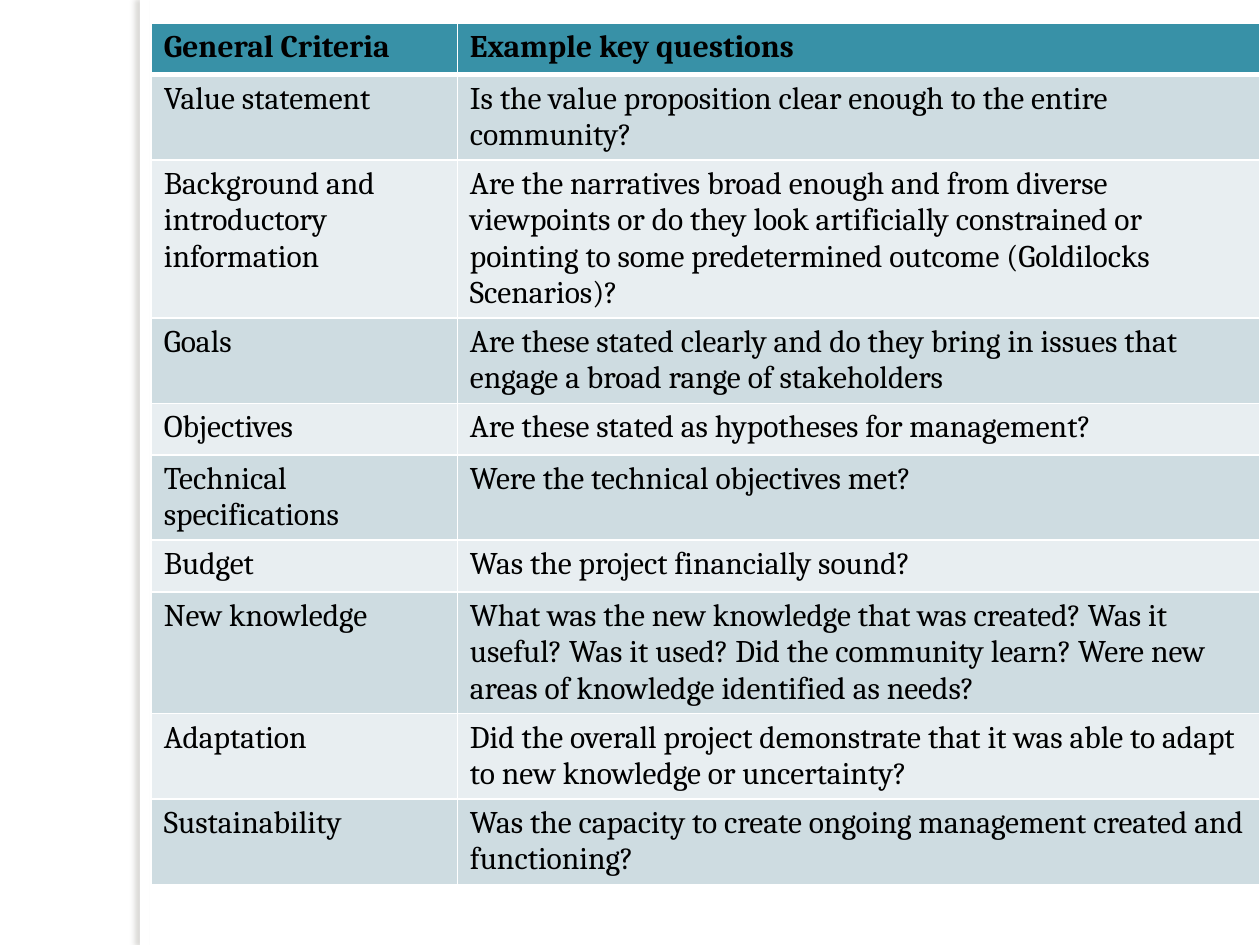
from lxml import etree
from pptx import Presentation
from pptx.dml.color import RGBColor
from pptx.enum.shapes import MSO_SHAPE
from pptx.oxml.ns import qn
from pptx.util import Cm, Pt

RECT = MSO_SHAPE.RECTANGLE
WHITE = RGBColor(0xFF, 0xFF, 0xFF)
BLACK = RGBColor(0x00, 0x00, 0x00)
TEAL = RGBColor(0x38, 0x91, 0xA7)
MIST = RGBColor(0xCE, 0xDC, 0xE1)
PALE = RGBColor(0xE8, 0xEE, 0xF1)
SHADE = RGBColor(0x73, 0x6F, 0x63)

ROWS = [
    ("General Criteria", "Example key questions"),
    ("Value statement",
     "Is the value proposition clear enough to the entire community?"),
    ("Background and introductory information",
     "Are the narratives broad enough and from diverse viewpoints or do they "
     "look artificially constrained or pointing to some predetermined outcome "
     "(Goldilocks Scenarios)?"),
    ("Goals",
     "Are these stated clearly and do they bring in issues that engage a "
     "broad range of stakeholders"),
    ("Objectives", "Are these stated as hypotheses for management?"),
    ("Technical specifications", "Were the technical objectives met?"),
    ("Budget", "Was the project financially sound?"),
    ("New knowledge",
     "What was the new knowledge that was created? Was it useful? Was it "
     "used? Did the community learn? Were new areas of knowledge identified "
     "as needs?"),
    ("Adaptation",
     "Did the overall project demonstrate that it was able to adapt to new "
     "knowledge or uncertainty?"),
    ("Sustainability",
     "Was the capacity to create ongoing management created and functioning?"),
]


class Deck:
    """Holds the text style and the current slide."""

    def __init__(self):
        self.prs = Presentation()
        self.prs.slide_width, self.prs.slide_height = Cm(25.4), Cm(19.05)
        self.slide = self.prs.slides.add_slide(self.prs.slide_layouts[6])
        self.style = {"name": "Cambria", "size": Pt(18)}

    def color(self, parent, rgb):
        return etree.SubElement(parent, qn("a:srgbClr"), val=str(rgb))

    def strip(self, left, top, width, height):
        shape = self.slide.shapes.add_shape(
            RECT, Cm(left), Cm(top), Cm(width), Cm(height))
        shape.fill.solid()
        shape.fill.fore_color.rgb = WHITE
        shape.line.fill.background()
        shape.shadow.inherit = False
        effects = shape.element.spPr.find(qn("a:effectLst"))
        shadow = etree.SubElement(
            effects, qn("a:outerShdw"), blurRad=str(Pt(3)), dist=str(Pt(3)),
            dir="10800000", algn="ctr", rotWithShape="0")
        etree.SubElement(self.color(shadow, SHADE), qn("a:alpha"), val="25000")

    def edges(self, cell, widths):
        props = cell._tc.get_or_add_tcPr()
        for side, width in widths.items():
            line = etree.SubElement(props, qn(f"a:ln{side}"), w=str(Pt(width)))
            self.color(etree.SubElement(line, qn("a:solidFill")), WHITE)

    def cell(self, cell, text, fill, bold, widths):
        self.edges(cell, widths)
        cell.fill.solid()
        cell.fill.fore_color.rgb = fill
        run = cell.text_frame.paragraphs[0].add_run()
        run.text = text
        for key, value in {**self.style, "bold": bold}.items():
            setattr(run.font, key, value)
        run.font.color.rgb = BLACK

    def table(self, rows, left, top, cols, height):
        table = self.slide.shapes.add_table(
            len(rows), len(cols), Cm(left), Cm(top),
            Cm(sum(cols)), Cm(height * len(rows))).table
        for col, width in zip(table.columns, cols):
            col.width = Cm(width)
        for i, texts in enumerate(rows):
            table.rows[i].height = Cm(height)
            head = i == 0
            fill = TEAL if head else MIST if i % 2 else PALE
            widths = {"L": 1, "R": 1, "T": 3 if i == 1 else 1,
                      "B": 3 if head else 1}
            for j, text in enumerate(texts):
                self.cell(table.cell(i, j), text, fill, head, widths)


def main():
    deck = Deck()
    deck.strip(2.82, 0, 0.2, 19.05)
    deck.table(ROWS, 3.05, 0.46, (6.17, 16.18), 1.04)
    deck.prs.save("out.pptx")


if __name__ == "__main__":
    main()
